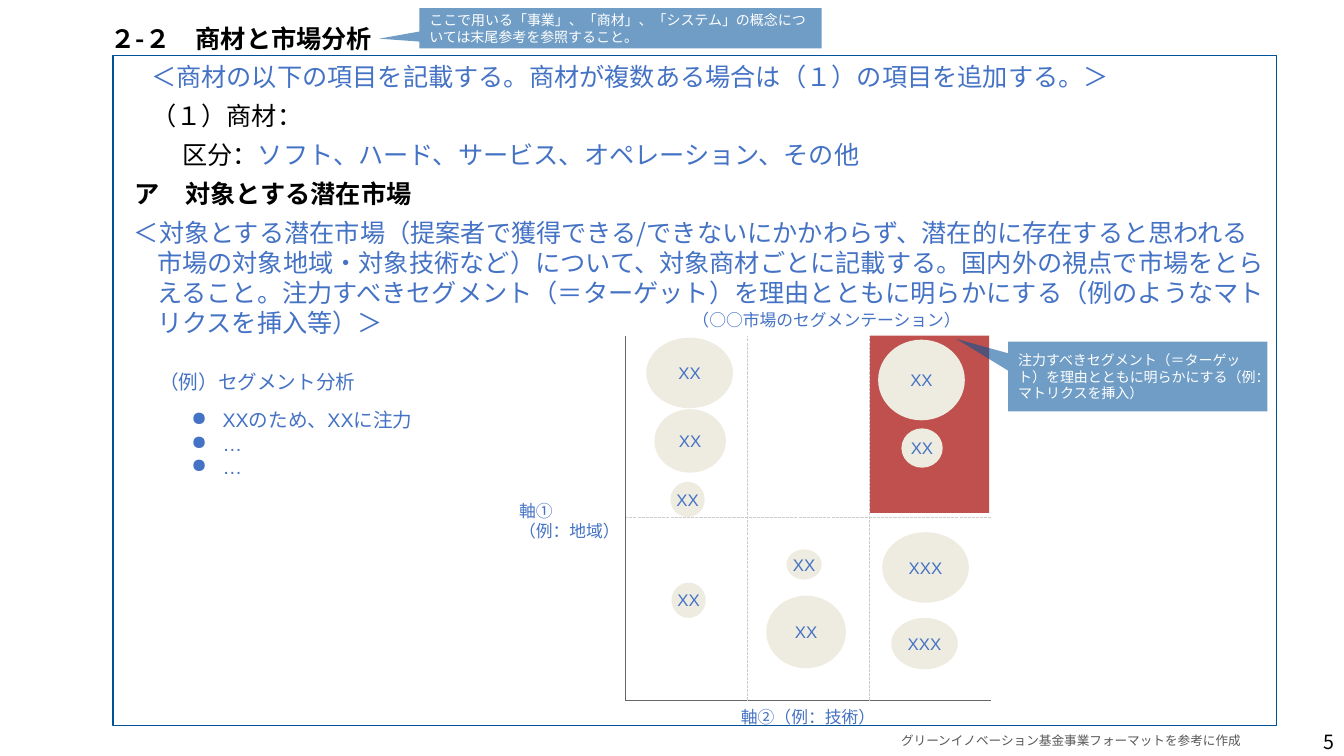
from dataclasses import dataclass
from typing import Optional

from lxml.etree import SubElement
from pptx import Presentation
from pptx.dml.color import RGBColor
from pptx.enum.dml import MSO_LINE
from pptx.enum.shapes import MSO_CONNECTOR, MSO_SHAPE
from pptx.enum.text import MSO_ANCHOR, MSO_AUTO_SIZE, PP_ALIGN
from pptx.oxml.ns import qn
from pptx.util import Inches, Pt

BLACK = RGBColor(0x00, 0x00, 0x00)
WHITE = RGBColor(0xFF, 0xFF, 0xFF)
BLUE = RGBColor(0x44, 0x72, 0xC4)
NAVY = RGBColor(0x00, 0x52, 0x98)
RED = RGBColor(0xC0, 0x50, 0x4D)
CREAM = RGBColor(0xEE, 0xEC, 0xE1)
SOURCE_GRAY = RGBColor(0x57, 0x57, 0x57)
AXIS_GRAY = RGBColor(0x66, 0x66, 0x66)
GRID_GRAY = RGBColor(0xCC, 0xCC, 0xCC)
LATIN_FONT = "Arial"
JAPANESE_FONT = "Noto Sans CJK JP"

MATRIX_LEFT, MATRIX_TOP, MATRIX_BOTTOM = 6.2, 3.33, 6.95
COLUMN_WIDTH, COLUMN_COUNT, ROW_DIVIDER = 1.21, 3, 5.13
MATRIX_RIGHT = MATRIX_LEFT + COLUMN_COUNT * COLUMN_WIDTH


@dataclass
class Line:
    text: str
    color: RGBColor = BLUE
    size: float = 18
    font: str = JAPANESE_FONT
    bold: bool = False
    margin: float = 0
    indent: float = 0
    space_before: float = 0
    align: PP_ALIGN = PP_ALIGN.LEFT
    bullet: str = ""
    tail: str = ""
    tail_color: RGBColor = BLUE


@dataclass
class TextBlock:
    box: tuple
    lines: list
    anchor: MSO_ANCHOR = MSO_ANCHOR.MIDDLE
    wrap: bool = True
    grow: bool = False
    top_inset: float = 0.05


@dataclass
class Bubble:
    box: tuple
    label: str = "XX"


@dataclass
class Callout:
    box: tuple
    pointer: tuple
    text: str


def small(text: str, size: float, color: RGBColor = BLUE, **options) -> Line:
    """Describe a line in the font of the matrix and its notes."""
    return Line(text, color, size, LATIN_FONT, **options)


def body(text: str, margin: float, indent: float, **options) -> Line:
    return Line(text, margin=margin, indent=indent, space_before=6, **options)


HEADING = TextBlock((0.61, 0.18, 12.21, 1.57), [
    body("２-２　商材と市場分析", 0.39, 0, color=BLACK, bold=True),
    body("＜商材の以下の項目を記載する。商材が複数ある場合は（１）の項目を追加する。＞", 1.06, -0.27),
    body("（１）商材：", 1.06, -0.27, color=BLACK),
    body("区分：", 1.37, -0.27, color=BLACK, tail="ソフト、ハード、サービス、オペレーション、その他"),
], MSO_ANCHOR.TOP, grow=True)
MARKET = TextBlock((0.45, 1.72, 12.21, 1.7), [
    body("ア　対象とする潜在市場", 1.38, -0.59, color=BLACK, bold=True),
    body("＜対象とする潜在市場（提案者で獲得できる/できないにかかわらず、潜在的に存在すると思われる"
         "市場の対象地域・対象技術など）について、対象商材ごとに記載する。国内外の視点で市場をとら"
         "えること。注力すべきセグメント（＝ターゲット）を理由とともに明らかにする（例のようなマト"
         "リクスを挿入等）＞", 1.01, -0.23),
], MSO_ANCHOR.TOP, grow=True)
NOTES = [
    TextBlock((12.48, 7.21, 0.85, 0.29), [Line("5", BLACK, 14, align=PP_ALIGN.RIGHT)]),
    TextBlock((8.64, 7.21, 3.96, 0.27), [
        small("グリーンイノベーション基金事業フォーマットを参考に作成", 9, SOURCE_GRAY, align=PP_ALIGN.CENTER)]),
    TextBlock((1.48, 3.67, 3.81, 0.24), [small("（例）セグメント分析", 14)]),
    TextBlock((1.8, 3.89, 3.86, 1.02), [
        small(text, 14, margin=0.31, indent=-0.31, bullet="●")
        for text in ("XXのため、XXに注力", "…", "…")], wrap=False),
    TextBlock((5.05, 4.97, 0.87, 0.39), [small("軸①", 12), small("（例：地域）", 12)],
              MSO_ANCHOR.TOP, wrap=False, top_inset=0),
    TextBlock((7.69, 6.97, 0.65, 0.28), [small("軸②（例：技術）", 12, align=PP_ALIGN.CENTER)], wrap=False),
    TextBlock((6.77, 3.07, 0.87, 0.39), [small("（○○市場のセグメンテーション）", 12)],
              MSO_ANCHOR.TOP, wrap=False, top_inset=0),
]
BUBBLES = [
    Bubble((6.41, 3.35, 0.86, 0.7)),
    Bubble((6.49, 4.06, 0.71, 0.63)),
    Bubble((6.65, 4.78, 0.34, 0.35)),
    Bubble((6.66, 5.78, 0.34, 0.35)),
    Bubble((7.8, 5.45, 0.35, 0.3)),
    Bubble((7.6, 5.91, 0.79, 0.72)),
    Bubble((8.71, 3.37, 0.86, 0.8)),
    Bubble((8.94, 4.25, 0.41, 0.39)),
    Bubble((8.75, 5.28, 0.86, 0.7), "XXX"),
    Bubble((8.84, 6.13, 0.66, 0.51), "XXX"),
]
CALLOUTS = [
    Callout((10, 3.39, 2.57, 0.69), (-0.7, -0.54),
            "注力すべきセグメント（＝ターゲット）を理由とともに明らかにする（例：マトリクスを挿入）"),
    Callout((4.16, 0.08, 3.99, 0.4), (-0.6, 0.26),
            "ここで用いる「事業」、「商材」、「システム」の概念については末尾参考を参照すること。"),
]


def format_run(run, line: Line, color: RGBColor) -> None:
    run.font.name = line.font
    run.font.size = Pt(line.size)
    run.font.bold = line.bold
    run.font.color.rgb = color
    SubElement(run._r.get_or_add_rPr(), qn("a:ea")).set("typeface", JAPANESE_FONT)


def fill_paragraph(paragraph, line: Line) -> None:
    paragraph.text = line.text
    paragraph.alignment = line.align
    paragraph.space_before = Pt(line.space_before)
    properties = paragraph._p.get_or_add_pPr()
    properties.set("marL", str(Inches(line.margin)))
    properties.set("indent", str(Inches(line.indent)))
    if line.bullet:
        SubElement(properties, qn("a:buChar")).set("char", line.bullet)
    format_run(paragraph.runs[0], line, line.color)
    if line.tail:
        tail = paragraph.add_run()
        tail.text = line.tail
        format_run(tail, line, line.tail_color)


def write_text(shape, block: TextBlock) -> None:
    frame = shape.text_frame
    frame.word_wrap = block.wrap
    frame.vertical_anchor = block.anchor
    frame.auto_size = MSO_AUTO_SIZE.SHAPE_TO_FIT_TEXT if block.grow else MSO_AUTO_SIZE.NONE
    frame.margin_top = Inches(block.top_inset)
    for index, line in enumerate(block.lines):
        fill_paragraph(frame.add_paragraph() if index else frame.paragraphs[0], line)


def add_text(slide, block: TextBlock) -> None:
    write_text(slide.shapes.add_textbox(*map(Inches, block.box)), block)


def add_figure(slide, kind: MSO_SHAPE, box: tuple, fill: Optional[RGBColor] = None):
    shape = slide.shapes.add_shape(kind, *map(Inches, box))
    shape.shadow.inherit = False
    shape.line.fill.background()
    if fill is None:
        shape.fill.background()
    else:
        shape.fill.solid()
        shape.fill.fore_color.rgb = fill
    return shape


def add_bubble(slide, bubble: Bubble) -> None:
    shape = add_figure(slide, MSO_SHAPE.OVAL, bubble.box, CREAM)
    label = small(bubble.label, 12, align=PP_ALIGN.CENTER)
    write_text(shape, TextBlock(bubble.box, [label], wrap=False))


def add_callout(slide, callout: Callout) -> None:
    shape = add_figure(slide, MSO_SHAPE.RECTANGULAR_CALLOUT, callout.box, NAVY)
    shape.adjustments[0], shape.adjustments[1] = callout.pointer
    color = shape._element.spPr.find(qn("a:solidFill")).find(qn("a:srgbClr"))
    SubElement(color, qn("a:alpha")).set("val", "56000")
    write_text(shape, TextBlock(callout.box, [small(callout.text, 10, WHITE)]))


def add_line(slide, start: tuple, end: tuple, divider: bool) -> None:
    line = slide.shapes.add_connector(MSO_CONNECTOR.STRAIGHT, *map(Inches, start + end))
    line.line.color.rgb = GRID_GRAY if divider else AXIS_GRAY
    line.line.width = Pt(0.75)
    if divider:
        line.line.dash_style = MSO_LINE.SQUARE_DOT
    SubElement(line._element.spPr, qn("a:effectLst"))


def add_matrix(slide) -> None:
    add_figure(slide, MSO_SHAPE.RECTANGLE, (8.63, MATRIX_TOP, 1.18, 1.76), RED)
    for y in (MATRIX_BOTTOM, ROW_DIVIDER):
        add_line(slide, (MATRIX_LEFT, y), (MATRIX_RIGHT, y), y == ROW_DIVIDER)
    for column in range(COLUMN_COUNT):
        x = MATRIX_LEFT + column * COLUMN_WIDTH
        add_line(slide, (x, MATRIX_BOTTOM), (x, MATRIX_TOP), column > 0)
    for bubble in BUBBLES:
        add_bubble(slide, bubble)


def main() -> None:
    presentation = Presentation()
    presentation.slide_width, presentation.slide_height = Inches(13.33), Inches(7.5)
    slide = presentation.slides.add_slide(presentation.slide_layouts[6])
    add_text(slide, MARKET)
    border = add_figure(slide, MSO_SHAPE.RECTANGLE, (1.12, 0.55, 11.54, 6.65))
    border.line.color.rgb = NAVY
    border.line.width = Pt(1)
    add_matrix(slide)
    for note in NOTES:
        add_text(slide, note)
    for callout in CALLOUTS:
        add_callout(slide, callout)
    add_text(slide, HEADING)
    presentation.save("out.pptx")


if __name__ == "__main__":
    main()
